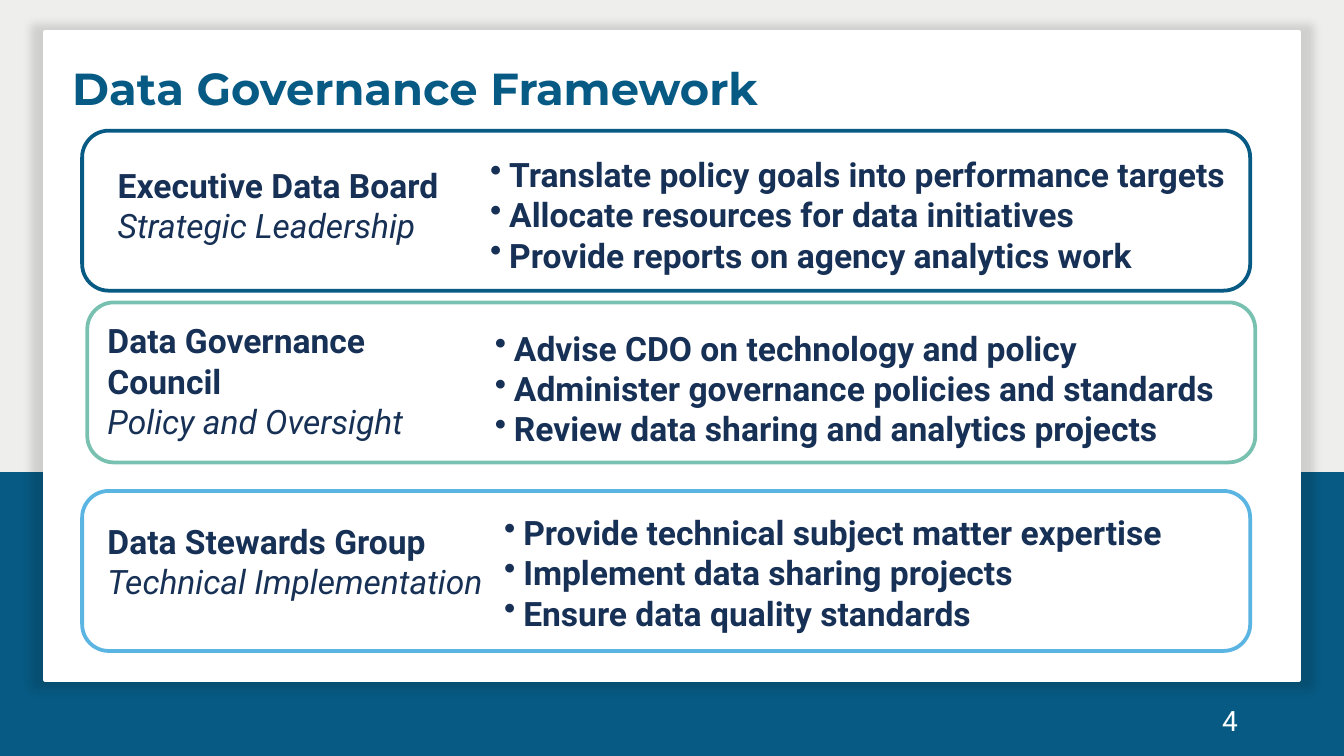
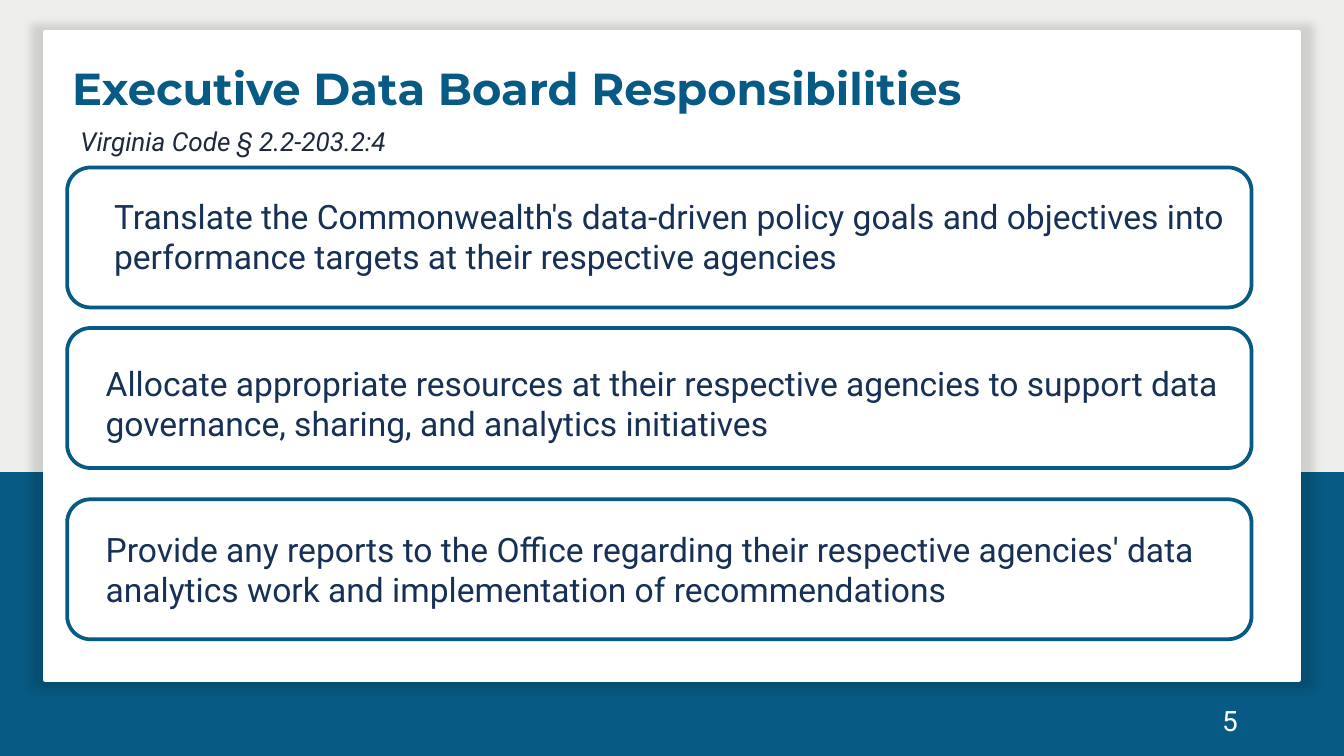
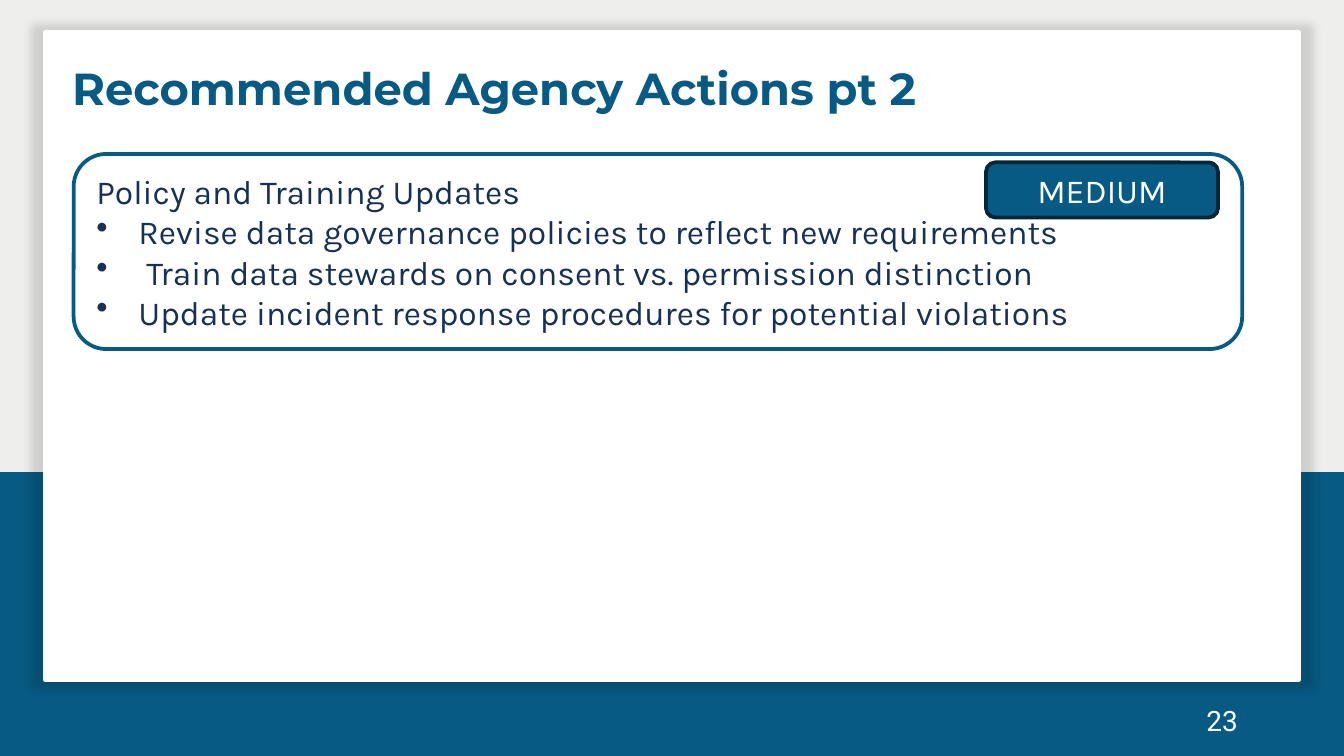
from dataclasses import dataclass

from lxml.etree import SubElement
from pptx import Presentation
from pptx.dml.color import RGBColor
from pptx.enum.shapes import MSO_SHAPE
from pptx.enum.text import MSO_ANCHOR, MSO_AUTO_SIZE, PP_ALIGN
from pptx.oxml.ns import qn
from pptx.util import Pt


@dataclass(frozen=True)
class Theme:
    backdrop: str = "EEEEED"
    blue: str = "075A83"
    dark_blue: str = "032739"
    green: str = "78C1B1"
    sky: str = "5BB5E2"
    navy: str = "173055"
    slate: str = "1E293B"
    white: str = "FFFFFF"
    heading_font: str = "Montserrat"
    body_font: str = "Roboto"
    action_font: str = "Karla"
    title_size: int = 24
    body_size: int = 18
    number_size: int = 15
    citation_size: int = 14
    outline: int = 2


THEME = Theme()
SLIDE_WIDTH, SLIDE_HEIGHT = 720, 405

# Boxes are (left, top, width, height) in points.
BAND = (0, 253, SLIDE_WIDTH, 152)
PANEL = (24.25, 17.25, 671.5, 347)
TITLE = (31.5, 23.75, 657, 46)
PAGE_NUMBER = (508.25, 375, 162, 21.5)

FRAMEWORK = {
    "title": "Data Governance Framework",
    "number": 4,
    "tiers": [
        {
            "group": "Executive Data Board",
            "role": "Strategic Leadership",
            "duties": [
                "Translate policy goals into performance targets",
                "Allocate resources for data initiatives",
                "Provide reports on agency analytics work",
            ],
            "color": THEME.blue,
            "card": (44, 70),
            "group_box": (56, 97.25, 252, 25),
            "duties_box": (255.5, 79, 418, 65),
        },
        {
            "group": "Data Governance Council",
            "role": "Policy and Oversight",
            "duties": [
                "Advise CDO on technology and policy",
                "Administer governance policies and standards",
                "Review data sharing and analytics projects",
            ],
            "color": THEME.green,
            "card": (46.75, 162),
            "group_box": (50.5, 191.5, 216, 25),
            "duties_box": (258, 172, 412, 65),
        },
        {
            "group": "Data Stewards Group",
            "role": "Technical Implementation",
            "duties": [
                "Provide technical subject matter expertise",
                "Implement data sharing projects",
                "Ensure data quality standards",
            ],
            "color": THEME.sky,
            "card": (44, 263),
            "group_box": (50.5, 288, 252, 25),
            "duties_box": (263, 270.75, 382, 65),
        },
    ],
}
TIER_SIZE = (625.75, 85.75)

RESPONSIBILITIES = {
    "title": "Executive Data Board Responsibilities",
    "number": 5,
    "citation": "Virginia Code § 2.2-203.2:4",
    # (text, card top, text box)
    "items": [
        ("Translate the Commonwealth's data-driven policy goals and objectives "
         "into performance targets at their respective agencies",
         89.75, (54, 103, 611, 47)),
        ("Allocate appropriate resources at their respective agencies to support "
         "data governance, sharing, and analytics initiatives",
         175.75, (49.5, 192.5, 616, 47)),
        ("Provide any reports to the Office regarding their respective agencies' "
         "data analytics work and implementation of recommendations",
         267.5, (49.5, 281.5, 616, 47)),
    ],
}
CITATION = (36, 65, 648, 21.5)
ITEM_LEFT, ITEM_SIZE = 36, (634.5, 75)

ACTIONS = {
    "title": "Recommended Agency Actions pt 2",
    "number": 23,
    "heading": "Policy and Training Updates",
    "steps": [
        "Revise data governance policies to reflect new requirements",
        " Train data stewards on consent vs. permission distinction",
        "Update incident response procedures for potential violations",
    ],
    "priority": "MEDIUM",
}
ACTION_CARD = (39.5, 82.5, 626, 104.5)
PRIORITY_BADGE = (528.25, 87, 124.25, 29.5)


def points(box):
    return [Pt(length) for length in box]


def write(frame, text, *, font=THEME.body_font, size=THEME.body_size,
          color=THEME.navy, bold=False, italic=False, align=PP_ALIGN.LEFT,
          bullet_indent=0):
    """Add one formatted paragraph, filling the first one if it is empty."""
    first = frame.paragraphs[0]
    paragraph = frame.add_paragraph() if first.runs else first
    paragraph.alignment = align
    if bullet_indent:
        properties = paragraph._p.get_or_add_pPr()
        properties.set("marL", str(Pt(bullet_indent)))
        properties.set("indent", str(-Pt(bullet_indent)))
        SubElement(properties, qn("a:buChar"), char="•")
    run = paragraph.add_run()
    run.text = text
    run.font.name = font
    run.font.size = Pt(size)
    run.font.bold = bold
    run.font.italic = italic
    run.font.color.rgb = RGBColor.from_string(color)


def add_frame(slide, box, anchor=MSO_ANCHOR.MIDDLE):
    frame = slide.shapes.add_textbox(*points(box)).text_frame
    frame.word_wrap = True
    frame.vertical_anchor = anchor
    return frame


def add_block(slide, box, fill=THEME.white, line=None,
              preset=MSO_SHAPE.ROUNDED_RECTANGLE):
    block = slide.shapes.add_shape(preset, *points(box))
    block.fill.solid()
    block.fill.fore_color.rgb = RGBColor.from_string(fill)
    if line:
        block.line.color.rgb = RGBColor.from_string(line)
        block.line.width = Pt(THEME.outline)
    else:
        block.line.fill.background()
    block.shadow.inherit = False
    block.text_frame.vertical_anchor = MSO_ANCHOR.MIDDLE
    return block


def add_glow(block):
    """Give the block a soft, centred shadow."""
    effects = block.element.spPr.find(qn("a:effectLst"))
    shadow = SubElement(effects, qn("a:outerShdw"), blurRad=str(Pt(5)),
                        sx="102000", sy="102000", algn="ctr", rotWithShape="0")
    black = SubElement(shadow, qn("a:srgbClr"), val="000000")
    SubElement(black, qn("a:alpha"), val="13000")


def prepare_layout(presentation):
    """Put backdrop, band, panel and title position on the shared layout."""
    layout = presentation.slide_layouts.get_by_name("Title Only")
    layout.background.fill.solid()
    layout.background.fill.fore_color.rgb = RGBColor.from_string(THEME.backdrop)
    for placeholder in list(layout.placeholders):
        if placeholder.placeholder_format.idx:
            layout.shapes.element.remove(placeholder.element)
    title = layout.placeholders[0]
    title.left, title.top, title.width, title.height = points(TITLE)
    return layout


def move_to_layout(layout, blocks):
    for position, block in enumerate(blocks, start=2):
        layout.shapes.element.insert(position, block.element)


def add_slide(presentation, layout, content):
    slide = presentation.slides.add_slide(layout)
    if len(presentation.slides) == 1:
        band = add_block(slide, BAND, THEME.blue, preset=MSO_SHAPE.RECTANGLE)
        panel = add_block(slide, PANEL, line=THEME.white,
                          preset=MSO_SHAPE.RECTANGLE)
        add_glow(panel)
        move_to_layout(layout, [band, panel])
    title = slide.shapes.title.text_frame
    title.auto_size = MSO_AUTO_SIZE.NONE
    title.vertical_anchor = MSO_ANCHOR.MIDDLE
    write(title, content["title"], font=THEME.heading_font,
          size=THEME.title_size, color=THEME.blue, bold=True)
    write(add_frame(slide, PAGE_NUMBER), str(content["number"]),
          size=THEME.number_size, color=THEME.white, align=PP_ALIGN.RIGHT)
    return slide


def fill_framework(slide):
    for tier in FRAMEWORK["tiers"]:
        add_block(slide, tier["card"] + TIER_SIZE, line=tier["color"])
        group = add_frame(slide, tier["group_box"])
        write(group, tier["group"], bold=True)
        write(group, tier["role"], italic=True)
        duties = add_frame(slide, tier["duties_box"], MSO_ANCHOR.TOP)
        for duty in tier["duties"]:
            write(duties, duty, bold=True, bullet_indent=10.25)


def fill_responsibilities(slide):
    write(add_frame(slide, CITATION), RESPONSIBILITIES["citation"],
          size=THEME.citation_size, color=THEME.slate, italic=True)
    for text, top, text_box in RESPONSIBILITIES["items"]:
        add_block(slide, (ITEM_LEFT, top) + ITEM_SIZE, line=THEME.blue)
        write(add_frame(slide, text_box), text)


def fill_actions(slide):
    card = add_block(slide, ACTION_CARD, line=THEME.blue).text_frame
    write(card, ACTIONS["heading"], font=THEME.action_font)
    for step in ACTIONS["steps"]:
        write(card, step, font=THEME.action_font, bullet_indent=22.5)
    badge = add_block(slide, PRIORITY_BADGE, THEME.blue, THEME.dark_blue)
    write(badge.text_frame, ACTIONS["priority"], font=THEME.action_font,
          color=THEME.white, align=PP_ALIGN.CENTER)


def main():
    presentation = Presentation()
    presentation.slide_width = Pt(SLIDE_WIDTH)
    presentation.slide_height = Pt(SLIDE_HEIGHT)
    layout = prepare_layout(presentation)
    for content, fill in [(FRAMEWORK, fill_framework),
                          (RESPONSIBILITIES, fill_responsibilities),
                          (ACTIONS, fill_actions)]:
        fill(add_slide(presentation, layout, content))
    presentation.save("out.pptx")


if __name__ == "__main__":
    main()
